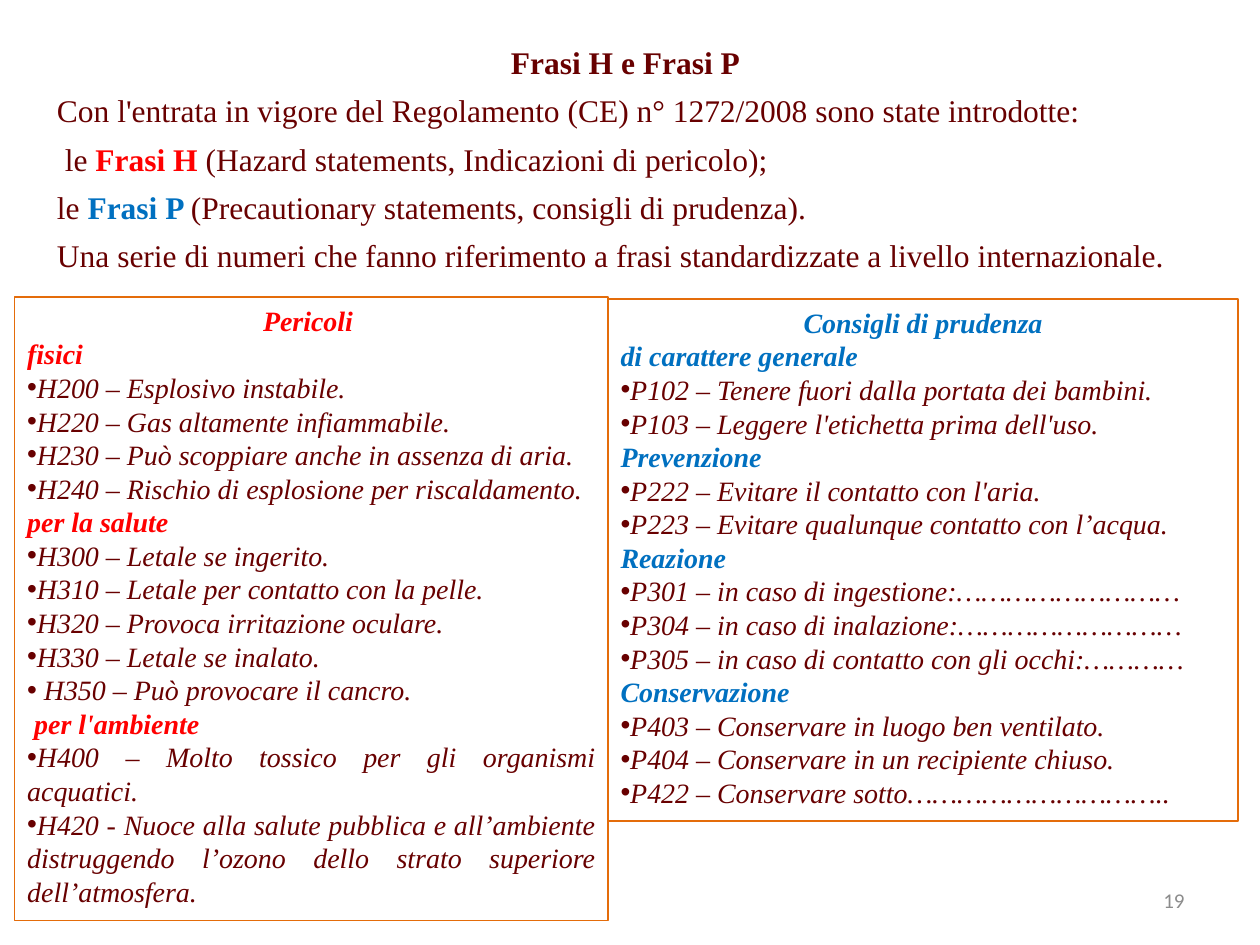
from lxml import etree
from pptx import Presentation
from pptx.dml.color import RGBColor
from pptx.enum.shapes import MSO_SHAPE
from pptx.enum.text import MSO_ANCHOR, PP_ALIGN
from pptx.oxml.ns import qn
from pptx.util import Cm, Pt

RECTANGLE = MSO_SHAPE.RECTANGLE
TOP, MIDDLE = MSO_ANCHOR.TOP, MSO_ANCHOR.MIDDLE
LEFT, CENTER = PP_ALIGN.LEFT, PP_ALIGN.CENTER
RIGHT, JUSTIFY = PP_ALIGN.RIGHT, PP_ALIGN.JUSTIFY

SERIF = "Times New Roman"
BROWN, RED, BLUE = "680000", "FF0000", "0070C0"
ORANGE, GREY = "E46C0A", "8C8C8C"

INTRO = [
    [("Con l'entrata in vigore del Regolamento (CE) n° 1272/2008 "
      "sono state introdotte:", BROWN)],
    [(" le ", BROWN), ("Frasi H", RED),
     (" (Hazard statements, Indicazioni di pericolo);", BROWN)],
    [("le ", BROWN), ("Frasi P ", BLUE),
     ("(Precautionary statements, consigli di prudenza). ", BROWN)],
    [("Una serie di numeri che fanno riferimento a frasi standardizzate "
      "a livello internazionale.", BROWN)],
]

HAZARDS = {
    "fisici": [
        "H200 – Esplosivo instabile.",
        "H220 – Gas altamente infiammabile.",
        "H230 – Può scoppiare anche in assenza di aria.",
        "H240 – Rischio di esplosione per riscaldamento.",
    ],
    "per la salute": [
        "H300 – Letale se ingerito.",
        "H310 – Letale per contatto con la pelle.",
        "H320 – Provoca irritazione oculare.",
        "H330 – Letale se inalato.",
        " H350 – Può provocare il cancro.",
    ],
    " per l'ambiente": [
        "H400 – Molto tossico per gli organismi acquatici.",
        "H420 - Nuoce alla salute pubblica e all’ambiente distruggendo "
        "l’ozono dello strato superiore dell’atmosfera.",
    ],
}

PRECAUTIONS = {
    "di carattere generale": [
        "P102 – Tenere fuori dalla portata dei bambini.",
        "P103 – Leggere l'etichetta prima dell'uso.",
    ],
    "Prevenzione": [
        "P222 – Evitare il contatto con l'aria.",
        "P223 – Evitare qualunque contatto con l’acqua.",
    ],
    "Reazione": [
        "P301 – in caso di ingestione:………………………",
        "P304 – in caso di inalazione:………………………",
        "P305 – in caso di contatto con gli occhi:…………",
    ],
    "Conservazione": [
        "P403 – Conservare in luogo ben ventilato.",
        "P404 – Conservare in un recipiente chiuso.",
        "P422 – Conservare sotto…………………………..",
    ],
}


def rgb(value):
    return RGBColor.from_string(value)


def add_span(para, text, size=18, color=BROWN, bold=False, italic=False,
             font=SERIF):
    span = para.add_run()
    span.text = text
    span.font.name = font
    span.font.size = Pt(size)
    span.font.bold = bold
    span.font.italic = italic
    span.font.color.rgb = rgb(color)


def next_para(frame, align, space_before=0):
    """Return the unused first paragraph, or a new one with space before it."""
    first = frame.paragraphs[0]
    if first.runs:
        para = frame.add_paragraph()
        para.space_before = Pt(space_before)
    else:
        para = first
    para.alignment = align
    return para


def add_bullet(para):
    properties = para._p.get_or_add_pPr()
    properties.set("marL", "0")
    properties.set("indent", "0")
    etree.SubElement(properties, qn("a:buFont")).set("typeface", "Arial")
    etree.SubElement(properties, qn("a:buChar")).set("char", "•")


def prepare_frame(box, anchor=TOP):
    frame = box.text_frame
    frame.word_wrap = True
    frame.vertical_anchor = anchor
    return frame


def set_title(page, text):
    title = page.shapes.title
    title.left, title.top = Cm(0.9), Cm(0.74)
    title.width, title.height = Cm(23.42), Cm(0.98)
    para = next_para(prepare_frame(title), CENTER)
    add_span(para, text, bold=True)


def add_intro(page):
    box = page.shapes.add_textbox(Cm(0.9), Cm(1.72), Cm(23.42), Cm(3.97))
    frame = prepare_frame(box)
    for spans in INTRO:
        para = next_para(frame, JUSTIFY, space_before=6)
        for text, color in spans:
            add_span(para, text, color=color, bold=color != BROWN)


def add_panel(page, left, top, width, height, heading, groups, color, align):
    """Add an outlined box with a heading and titled groups of bullets."""
    box = page.shapes.add_shape(RECTANGLE, Cm(left), Cm(top),
                                Cm(width), Cm(height))
    box.shadow.inherit = False
    box.fill.background()
    box.line.color.rgb = rgb(ORANGE)
    box.line.width = Pt(0.75)
    frame = prepare_frame(box)
    strong = {"size": 16, "color": color, "bold": True, "italic": True}
    add_span(next_para(frame, CENTER), heading, **strong)
    for name, phrases in groups.items():
        add_span(next_para(frame, align), name, **strong)
        for phrase in phrases:
            para = next_para(frame, align)
            add_bullet(para)
            add_span(para, phrase, size=16, italic=True)


def add_page_number(page, number):
    box = page.shapes.add_textbox(Cm(18.2), Cm(17.65), Cm(5.93), Cm(1.01))
    para = next_para(prepare_frame(box, MIDDLE), RIGHT)
    add_span(para, number, size=12, color=GREY, font="Calibri")


def main():
    deck = Presentation()
    deck.slide_width, deck.slide_height = Cm(25.4), Cm(19.05)
    page = deck.slides.add_slide(deck.slide_layouts[5])
    set_title(page, "Frasi H e Frasi P")
    add_intro(page)
    add_panel(page, 0.3, 5.99, 11.96, 12.57, "Pericoli ", HAZARDS,
              RED, JUSTIFY)
    add_panel(page, 12.26, 6.03, 12.7, 10.52, "Consigli di prudenza",
              PRECAUTIONS, BLUE, LEFT)
    add_page_number(page, "19")
    deck.save("out.pptx")


if __name__ == "__main__":
    main()
